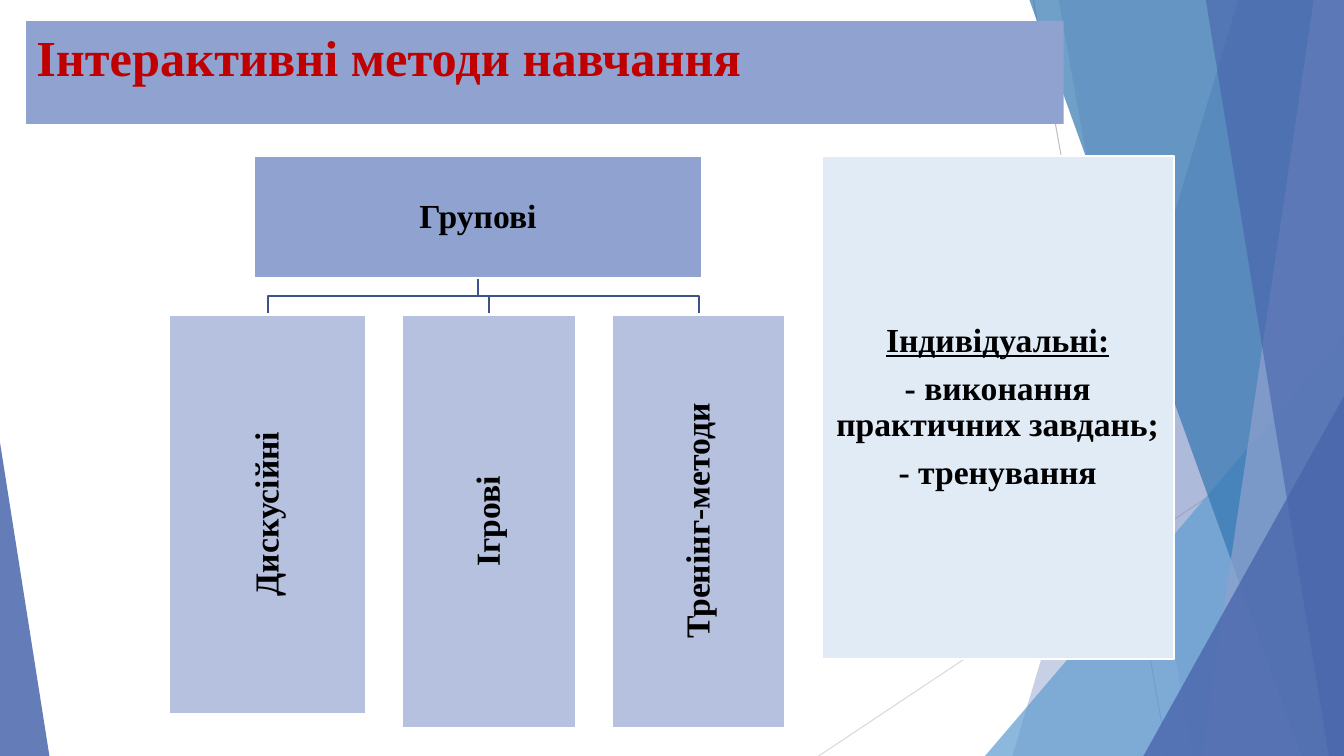
from lxml.etree import SubElement
from pptx import Presentation
from pptx.dml.color import RGBColor
from pptx.enum.shapes import MSO_SHAPE
from pptx.enum.text import MSO_ANCHOR, MSO_AUTO_SIZE, PP_ALIGN
from pptx.oxml.ns import qn
from pptx.util import Inches, Pt

FONT = "Times New Roman"
WHITE = RGBColor(0xFF, 0xFF, 0xFF)
BLACK = RGBColor(0, 0, 0)
RED = RGBColor(0xC0, 0, 0)
INDIGO = RGBColor(0x4A, 0x66, 0xAC)
SKY = RGBColor(0x62, 0x9D, 0xD1)
OCEAN = RGBColor(0x34, 0x77, 0xB2)
PERIWINKLE = RGBColor(0x90, 0xA2, 0xCF)
LAVENDER = RGBColor(0xB5, 0xC1, 0xDF)
ICE = RGBColor(0xE0, 0xEB, 0xF6)
BRANCH = RGBColor(0x3B, 0x52, 0x8A)
GRAY = RGBColor(0xBF, 0xBF, 0xBF)
LIGHT_GRAY = RGBColor(0xD9, 0xD9, 0xD9)

WIDTH, HEIGHT = 13.33, 7.5
TREE_TOP, ROOT_LEFT, ROOT_WIDTH, ROOT_HEIGHT = 1.55, 2.52, 4.44, 1.21
METHODS_LEFT, METHODS_TOP, GAP = 1.68, 3.12, 0.36
METHODS = [("Дискусійні", 1.95, 3.96), ("Ігрові", 1.72, 4.1),
           ("Тренінг-методи", 1.72, 4.1)]
INDIVIDUAL = ["Індивідуальні:", "- виконання практичних завдань;", "- тренування"]

# Top left, top right, bottom right and bottom left x of each band
BANDS = [
    ((12.28, WIDTH, WIDTH, 10.04), INDIGO, 30),
    ((10.5, WIDTH, WIDTH, 11.83), INDIGO, 20),
    ((10.21, WIDTH, WIDTH, 12.91), OCEAN, 70),
    ((13.03, WIDTH, WIDTH, 11.92), PERIWINKLE, 70),
    ((11.96, WIDTH, WIDTH, 13.18), INDIGO, 65),
]


def paint(shape, color, opacity=100):
    shape.shadow.inherit = False
    shape.fill.solid()
    shape.fill.fore_color.rgb = color
    shape.line.fill.background()
    if opacity < 100:
        solid = shape._element.spPr.find(qn("a:solidFill"))
        SubElement(solid[0], qn("a:alpha"), val=str(opacity * 1000))


def write(frame, lines, size=24, color=BLACK, align=PP_ALIGN.CENTER,
          anchor=MSO_ANCHOR.MIDDLE, margin=0.02, spacing=0.9, after=8.4,
          underline_first=False, vertical=False):
    frame.word_wrap = True
    frame.auto_size = MSO_AUTO_SIZE.NONE
    frame.vertical_anchor = anchor
    if margin is not None:
        frame.margin_left = frame.margin_right = Inches(margin)
        frame.margin_top = frame.margin_bottom = Inches(margin)
    if vertical:
        frame._txBody.bodyPr.set("vert", "vert270")
    for index, line in enumerate(lines):
        paragraph = frame.add_paragraph() if index else frame.paragraphs[0]
        paragraph.alignment = align
        paragraph.line_spacing = spacing
        paragraph.space_before = Pt(0)
        paragraph.space_after = Pt(after)
        run = paragraph.add_run()
        run.text = line
        run.font.name = FONT
        run.font.size = Pt(size)
        run.font.bold = True
        run.font.color.rgb = color
        if underline_first and index == 0:
            run.font.underline = True


def outline(slide, points, close):
    corners = [(Inches(x), Inches(y)) for x, y in points]
    builder = slide.shapes.build_freeform(*corners[0], scale=1.0)
    builder.add_line_segments(corners[1:], close=close)
    return builder.convert_to_shape()


def add_band(slide, edges, color, opacity):
    points = zip(edges, (0, 0, HEIGHT, HEIGHT))
    paint(outline(slide, points, close=True), color, opacity)


def add_corner(slide, left, top, width, apex, color, opacity):
    """Add a triangle that stands on the slide's bottom edge."""
    corner = slide.shapes.add_shape(
        MSO_SHAPE.ISOSCELES_TRIANGLE, Inches(left), Inches(top),
        Inches(width), Inches(HEIGHT - top))
    corner.adjustments[0] = apex
    paint(corner, color, opacity)


def add_ray(slide, start, end, color):
    ray = slide.shapes.add_connector(1, *map(Inches, start + end))
    ray.line.color.rgb = color
    ray.line.width = Pt(0.75)
    SubElement(ray._element.spPr, qn("a:effectLst"))


def add_background(slide):
    add_ray(slide, (10.25, 0), (11.58, HEIGHT), GRAY)
    add_ray(slide, (WIDTH, 4.03), (8.12, HEIGHT), LIGHT_GRAY)
    for band in BANDS[:2]:
        add_band(slide, *band)
    add_corner(slide, 9.77, 3.33, 3.56, 1, SKY, 72)
    for band in BANDS[2:]:
        add_band(slide, *band)
    add_corner(slide, 11.34, 3.93, 1.99, 1, INDIGO, 80)
    add_corner(slide, 0, 4.39, 0.49, 0, INDIGO, 85)


def add_title(slide):
    title = slide.shapes.title
    title.left, title.top = Inches(0.26), Inches(0.21)
    title.width, title.height = Inches(10.29), Inches(1.02)
    paint(title, PERIWINKLE)
    write(title.text_frame, ["Інтерактивні методи навчання"], size=36, color=RED,
          align=PP_ALIGN.LEFT, anchor=MSO_ANCHOR.TOP, margin=None,
          spacing=1.0, after=0)
    slide.shapes._spTree.append(title._element)  # in front of the bands


def add_box(slide, left, top, width, height, color, lines, **text_format):
    box = slide.shapes.add_shape(
        MSO_SHAPE.RECTANGLE, *map(Inches, (left, top, width, height)))
    paint(box, color)
    box.line.color.rgb = WHITE
    box.line.width = Pt(1.5)
    write(box.text_frame, lines, **text_format)


def add_branch(slide, root_x, root_bottom, method_x):
    middle = (root_bottom + METHODS_TOP) / 2
    branch = outline(slide, [(root_x, root_bottom), (root_x, middle),
                             (method_x, middle), (method_x, METHODS_TOP)],
                     close=False)
    branch.shadow.inherit = False
    branch.fill.background()
    branch.line.color.rgb = BRANCH
    branch.line.width = Pt(1.5)


def add_tree(slide):
    root_x = ROOT_LEFT + ROOT_WIDTH / 2
    left = METHODS_LEFT
    for name, width, height in METHODS:
        add_branch(slide, root_x, TREE_TOP + ROOT_HEIGHT, left + width / 2)
        add_box(slide, left, METHODS_TOP, width, height, LAVENDER, [name],
                vertical=True)
        left += width + GAP
    add_box(slide, ROOT_LEFT, TREE_TOP, ROOT_WIDTH, ROOT_HEIGHT, PERIWINKLE,
            ["Групові"])
    add_box(slide, left, TREE_TOP, 3.49, 4.99, ICE, INDIVIDUAL,
            underline_first=True)


def main():
    deck = Presentation()
    deck.slide_width, deck.slide_height = Inches(WIDTH), Inches(HEIGHT)
    slide = deck.slides.add_slide(deck.slide_layouts[5])
    add_background(slide)
    add_title(slide)
    add_tree(slide)
    deck.save("out.pptx")


if __name__ == "__main__":
    main()
